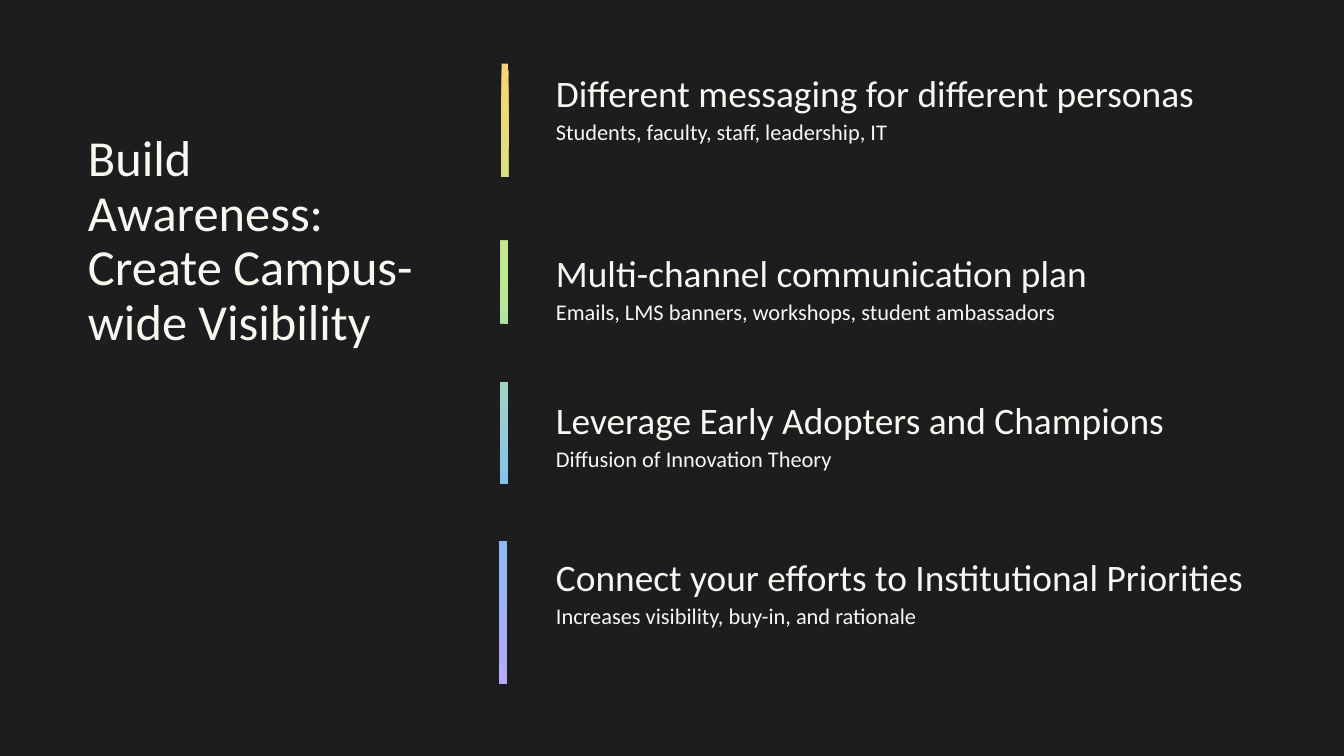
import lxml.etree
import pptx
import pptx.dml.color
import pptx.enum.shapes
import pptx.enum.text
import pptx.oxml.ns
import pptx.util

EMU_PER_PX = 914400 / 134.4
FONT = "Calibri"
DARK = "1D1D1F"
CREAM = "FAF6F0"
TILT = 0.2
BAR_STOPS = [(0, "FBD572"), (34, "BDEC90"), (71, "82BCF6"), (100, "B6ABF7")]
GAPS = [(458, 177, 90, 63), (468, 324, 90, 58), (460, 484, 90, 57)]
STRATEGIES = [
    (63, "Different messaging for different personas",
     "Students, faculty, staff, leadership, IT"),
    (243, "Multi-channel communication plan",
     "Emails, LMS banners, workshops, student ambassadors"),
    (390, "Leverage Early Adopters and Champions",
     "Diffusion of Innovation Theory"),
    (547, "Connect your efforts to Institutional Priorities",
     "Increases visibility, buy-in, and rationale"),
]


def px(length):
    return pptx.util.Emu(round(length * EMU_PER_PX))


def color(hex_string):
    return pptx.dml.color.RGBColor.from_string(hex_string)


def add_run(paragraph, text, size):
    run = paragraph.add_run()
    run.text = text
    run.font.name = FONT
    run.font.size = pptx.util.Pt(size)
    run.font.color.rgb = color(CREAM)


def set_insets(frame, left, top, right, bottom):
    frame.margin_left, frame.margin_top = px(left), px(top)
    frame.margin_right, frame.margin_bottom = px(right), px(bottom)


def place_heading(slide, box, text):
    heading = slide.shapes.title
    heading.left, heading.top, heading.width, heading.height = map(px, box)
    frame = heading.text_frame
    frame.word_wrap = True
    frame.auto_size = pptx.enum.text.MSO_AUTO_SIZE.NONE
    frame.vertical_anchor = pptx.enum.text.MSO_ANCHOR.MIDDLE
    set_insets(frame, 10, 5, 10, 5)
    paragraph = frame.paragraphs[0]
    paragraph.alignment = pptx.enum.text.PP_ALIGN.LEFT
    paragraph.line_spacing = 0.9
    add_run(paragraph, text, 27)


def place_strategy(slide, box, strategy, detail):
    frame = slide.shapes.add_textbox(*map(px, box)).text_frame
    frame.word_wrap = True
    set_insets(frame, 0, 0, 13, 0)
    lines = [frame.paragraphs[0], frame.add_paragraph()]
    for paragraph, text, size in zip(lines, (strategy, detail), (20, 12)):
        paragraph.line_spacing = 1.15
        properties = paragraph._p.get_or_add_pPr()
        properties.set("marL", str(px(5)))
        properties.set("indent", "0")
        add_run(paragraph, text, size)


def add_flipped_bar(slide, box, rotation):
    bar = slide.shapes.add_shape(
        pptx.enum.shapes.MSO_SHAPE.RECTANGLE, *map(px, box))
    bar.shadow.inherit = False
    bar.line.fill.background()
    bar.rotation = rotation
    bar._element.spPr.xfrm.set("flipH", "1")
    return bar


def set_gradient(fill, stops):
    qn = pptx.oxml.ns.qn
    fill.gradient()
    fill.gradient_angle = 0
    stop_list = fill._xPr.find(qn("a:gradFill")).find(qn("a:gsLst"))
    for stop in list(stop_list):
        stop_list.remove(stop)
    for percent, hex_string in stops:
        stop = lxml.etree.SubElement(
            stop_list, qn("a:gs"), pos=str(percent * 1000))
        lxml.etree.SubElement(stop, qn("a:srgbClr"), val=hex_string)


def place_segmented_bar(slide, box, gaps):
    left, top, width, height = box
    unturned = (left + (width - height) // 2, top + (height - width) // 2,
                height, width)
    set_gradient(add_flipped_bar(slide, unturned, 270 + TILT).fill, BAR_STOPS)
    for gap in gaps:
        cover = add_flipped_bar(slide, gap, 180 + TILT)
        cover.fill.solid()
        cover.fill.fore_color.rgb = color(DARK)


def build_awareness_slide(deck):
    slide = deck.slides.add_slide(deck.slide_layouts[5])
    slide.background.fill.solid()
    slide.background.fill.fore_color.rgb = color(DARK)
    place_heading(slide, (78, 189, 363, 106),
                  "Build Awareness: Create Campus-wide Visibility")
    for top, strategy, detail in STRATEGIES:
        place_strategy(slide, (551, top, 728, 128), strategy, detail)
    place_segmented_bar(slide, (501, 64, 7, 620), GAPS)


def main():
    deck = pptx.Presentation()
    deck.slide_width, deck.slide_height = px(1344), px(756)
    build_awareness_slide(deck)
    deck.save("out.pptx")


if __name__ == "__main__":
    main()
